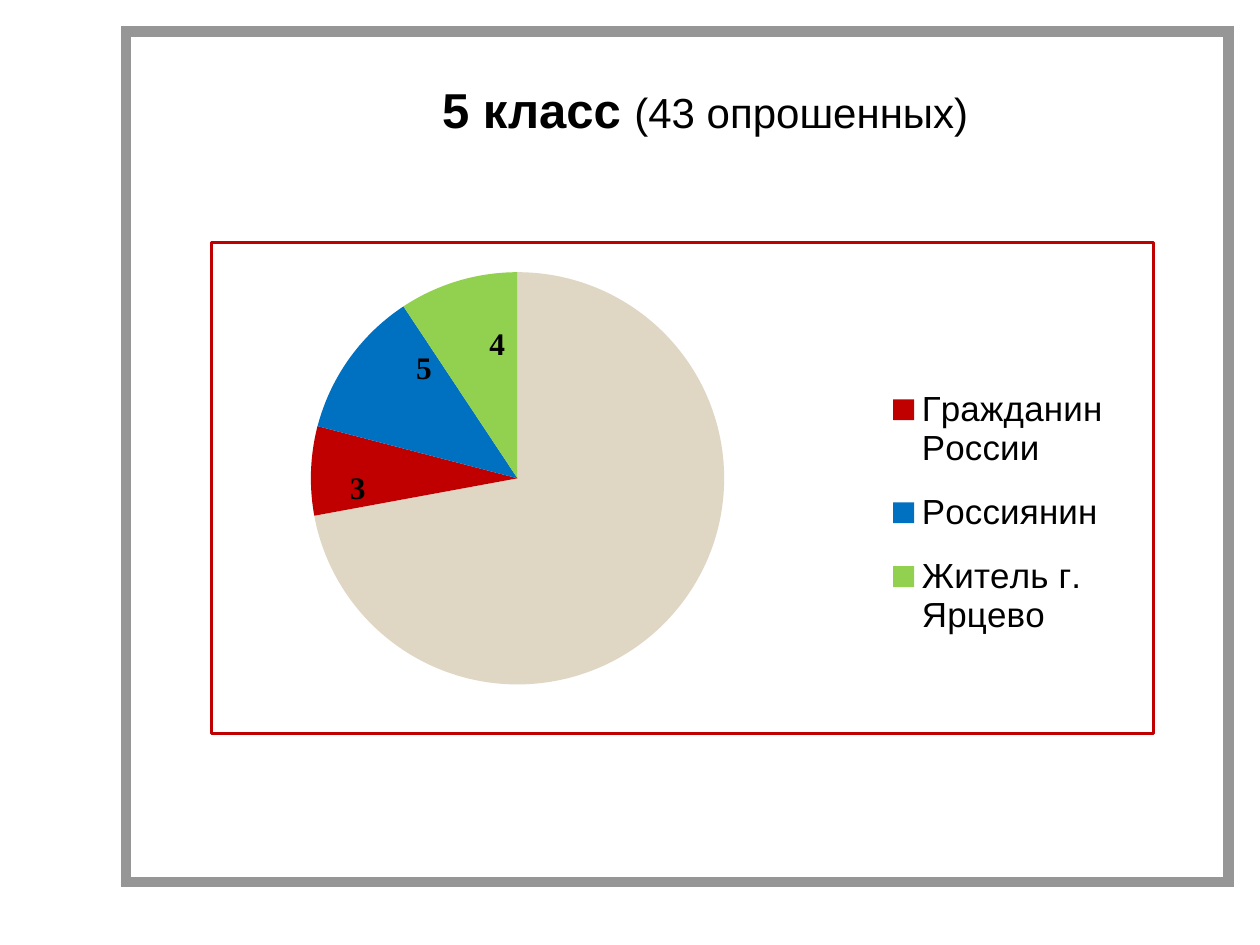
from lxml import etree
from pptx import Presentation
from pptx.chart.data import CategoryChartData
from pptx.dml.color import RGBColor
from pptx.enum.chart import XL_CHART_TYPE, XL_LABEL_POSITION, XL_LEGEND_POSITION
from pptx.enum.shapes import MSO_SHAPE
from pptx.enum.text import PP_ALIGN
from pptx.oxml import parse_xml
from pptx.oxml.ns import nsdecls, qn
from pptx.util import Pt

PIE = XL_CHART_TYPE.PIE
RECTANGLE = MSO_SHAPE.RECTANGLE
LABEL_CENTER = XL_LABEL_POSITION.CENTER
LEGEND_RIGHT = XL_LEGEND_POSITION.RIGHT
CENTER = PP_ALIGN.CENTER

COLORS = {"white": "FFFFFF", "frame": "969696", "text": "000000", "border": "C00000",
          "sand": "DFD6C3", "red": "C00000", "blue": "0070C0", "green": "92D050"}

# Content: title runs as (text, size, bold)
TITLE = [("5 класс ", 28, True), ("(43 опрошенных)", 24, False)]
# Slices as (category, value, color, label shift as a share of the chart);
# the first slice is unnamed and unlabelled
SLICES = [
    ("", 31, "sand", None),
    ("Гражданин России", 3, "red", (-0.06, 0.03)),
    ("Россиянин", 5, "blue", (-0.01, -0.1)),
    ("Житель г. Ярцево", 4, "green", (0.01, -0.07)),
]
PLOT_AREA = (0, 0.06, 0.65, 0.84)
LEGEND_AREA = (0.7, 0.25, 0.27, 0.6)


def color(name):
    return RGBColor.from_string(COLORS[name])


def style(font, face, size, bold):
    font.name, font.size, font.bold = face, Pt(size), bold
    font.color.rgb = color("text")


def layout(values, inner=False, absolute=True):
    """Manual chart layout from x, y and, if given, width and height."""
    element = parse_xml(f"<c:layout {nsdecls('c')}><c:manualLayout/></c:layout>")
    settings = [("layoutTarget", "inner")] if inner else []
    if absolute:
        settings += [("xMode", "edge"), ("yMode", "edge")]
    settings += zip("xywh", values)
    for tag, value in settings:
        etree.SubElement(element[0], qn(f"c:{tag}")).set("val", str(value))
    return element


deck = Presentation()
deck.slide_width, deck.slide_height = Pt(720), Pt(540)
page = deck.slides.add_slide(deck.slide_layouts[6])

# Page frame with square corners
frame = page.shapes.add_shape(RECTANGLE, Pt(72), Pt(18), Pt(630), Pt(486))
frame.shadow.inherit = False
frame.fill.solid()
frame.fill.fore_color.rgb = color("white")
frame.line.color.rgb = color("frame")
frame.line.width = Pt(6)
outline = frame._element.spPr.find(qn("a:ln"))
etree.SubElement(outline, qn("a:miter")).set("lim", "800000")

# Title
box = page.shapes.add_textbox(Pt(244), Pt(42), Pt(318), Pt(41))
box.text_frame.word_wrap = False
para = box.text_frame.paragraphs[0]
para.alignment = CENTER
for text, size, bold in TITLE:
    span = para.add_run()
    span.text = text
    style(span.font, "Arial", size, bold)

# Pie chart
data = CategoryChartData()
data.categories = [name for name, *_ in SLICES]
data.add_series("", [value for _, value, *_ in SLICES])
chart = page.shapes.add_chart(PIE, Pt(120), Pt(138), Pt(540), Pt(282), data).chart
chart.has_title = False
style(chart.font, "Times New Roman", 18, True)
plot = chart.plots[0]
plot.vary_by_categories = True
series = plot.series[0]
series.data_labels.show_value = False

# Slices and their value labels
for index, (_, _, fill, shift) in enumerate(SLICES):
    point = series.points[index]
    point.format.fill.solid()
    point.format.fill.fore_color.rgb = color(fill)
    if shift:
        style(point.data_label.font, "Times New Roman", 18, True)
        point.data_label.position = LABEL_CENTER
        label = series._element.xpath(f"c:dLbls/c:dLbl[c:idx/@val='{index}']")[0]
        label.find(qn("c:idx")).addnext(layout(shift, absolute=False))

# Legend of the named slices
chart.has_legend = True
legend = chart.legend
legend.position = LEGEND_RIGHT
legend.include_in_layout = False
style(legend.font, "Arial", 20, False)
legend_xml = legend._element
for old in legend_xml.findall(qn("c:layout")):
    legend_xml.remove(old)
unnamed = parse_xml(f'<c:legendEntry {nsdecls("c")}><c:idx val="0"/>'
                    '<c:delete val="1"/></c:legendEntry>')
legend_xml.find(qn("c:legendPos")).addnext(unnamed)
unnamed.addnext(layout(LEGEND_AREA))

# Plot position and chart border
chart_xml = chart._chartSpace.find(qn("c:chart"))
plot_xml = chart_xml.find(qn("c:plotArea"))
for old in plot_xml.findall(qn("c:layout")):
    plot_xml.remove(old)
plot_xml.insert(0, layout(PLOT_AREA, inner=True))
chart_xml.addnext(parse_xml(
    f'<c:spPr {nsdecls("c", "a")}><a:noFill/><a:ln w="{Pt(1.5)}"><a:solidFill>'
    f'<a:srgbClr val="{COLORS["border"]}"/></a:solidFill></a:ln></c:spPr>'))

deck.save("out.pptx")
